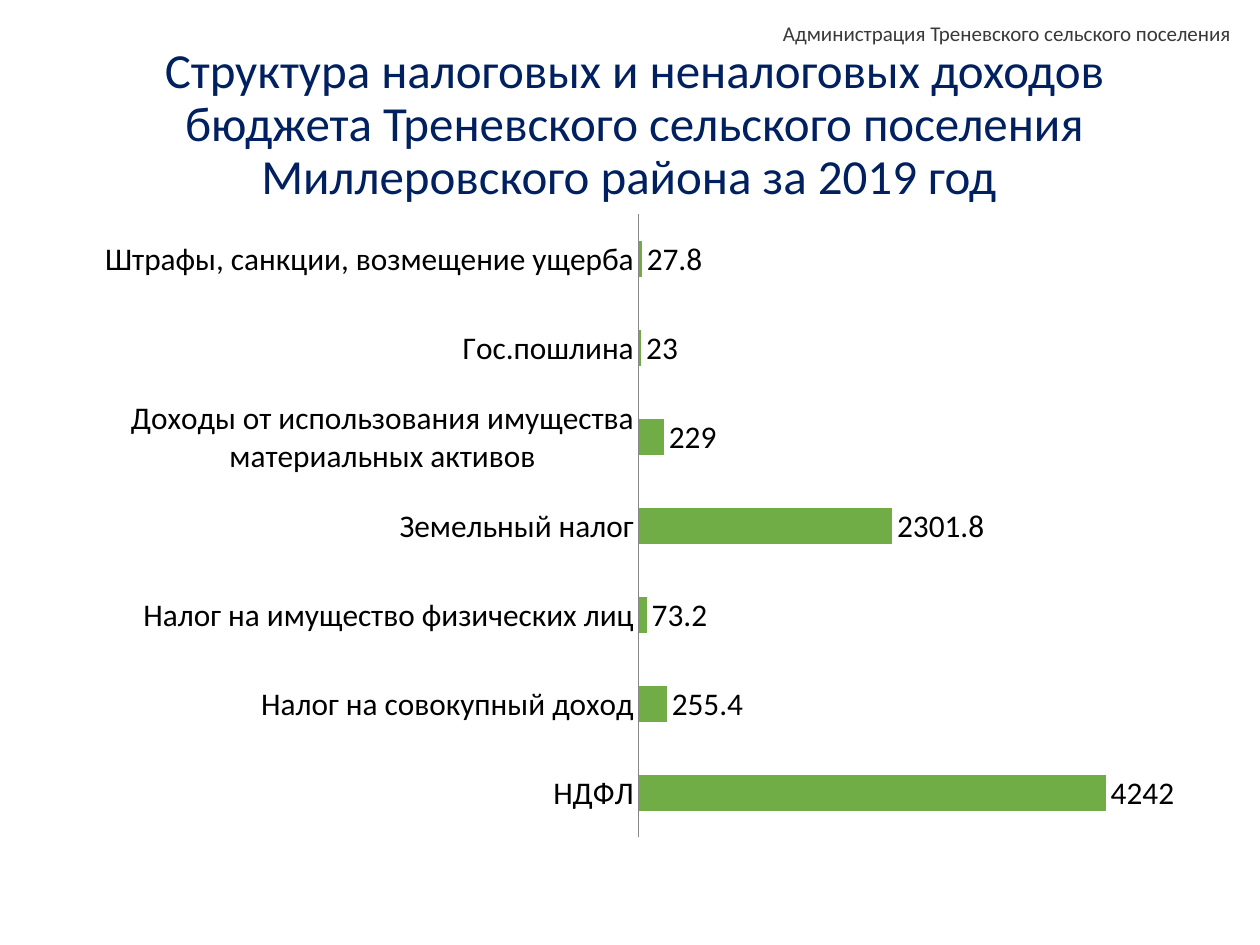
from lxml import etree
from pptx import Presentation
from pptx.chart.data import CategoryChartData
from pptx.dml.color import RGBColor
from pptx.enum.chart import XL_CHART_TYPE, XL_LABEL_POSITION, XL_TICK_MARK
from pptx.enum.text import MSO_ANCHOR, MSO_AUTO_SIZE, PP_ALIGN
from pptx.oxml.ns import qn
from pptx.util import Inches, Pt

BAR_CLUSTERED = XL_CHART_TYPE.BAR_CLUSTERED
OUTSIDE_END = XL_LABEL_POSITION.OUTSIDE_END
NO_TICK = XL_TICK_MARK.NONE
MIDDLE = MSO_ANCHOR.MIDDLE
NO_AUTO_SIZE = MSO_AUTO_SIZE.NONE
CENTER, RIGHT = PP_ALIGN.CENTER, PP_ALIGN.RIGHT

FONT = "Calibri"
COLORS = {"title": "002060", "header": "3B3838", "text": "000000",
          "bar": "70AD47", "axis": "878787"}
TITLE = ("Структура налоговых и неналоговых доходов бюджета Треневского "
         "сельского поселения Миллеровского района за 2019 год ")
HEADER = "Администрация Треневского сельского поселения"
REVENUES = {
    "НДФЛ": 4242,
    "Налог на совокупный доход": 255.4,
    "Налог на имущество физических лиц": 73.2,
    "Земельный налог": 2301.8,
    "Доходы от использования имущества материальных активов": 229,
    "Гос.пошлина": 23,
    "Штрафы, санкции, возмещение ущерба": 27.8,
}
PLOT_LAYOUT = {"layoutTarget": "inner", "xMode": "edge", "yMode": "edge",
               "x": 0.51, "y": 0.02, "w": 0.46, "h": 0.96}


def color(name):
    return RGBColor.from_string(COLORS[name])


def set_attributes(target, values):
    for name, value in values.items():
        setattr(target, name, value)


def format_font(font, size, color_name):
    set_attributes(font, {"name": FONT, "size": Pt(size), "bold": False})
    font.color.rgb = color(color_name)


def fill_text(shape, text, size, color_name, alignment, line_spacing=1.0):
    frame = shape.text_frame
    set_attributes(frame, {"word_wrap": True, "auto_size": NO_AUTO_SIZE,
                           "vertical_anchor": MIDDLE})
    paragraph = frame.paragraphs[0]
    set_attributes(paragraph, {"alignment": alignment, "line_spacing": line_spacing})
    run = paragraph.add_run()
    run.text = text
    format_font(run.font, size, color_name)


def add_title(slide):
    title = slide.shapes.title
    set_attributes(title, {"left": Inches(0.75), "top": Inches(0.46),
                           "width": Inches(8.57), "height": Inches(1.07)})
    fill_text(title, TITLE, 28, "title", CENTER, 0.9)


def add_header(slide):
    box = slide.shapes.add_textbox(Inches(3.54), Inches(0.14), Inches(6.33), Inches(0.24))
    fill_text(box, HEADER, 12, "header", RIGHT)


def set_plot_layout(chart):
    """Fix the inner plot area so that the category labels keep their room."""
    plot_area = chart.plots[0]._element.getparent()
    layout = plot_area.find(qn("c:layout"))
    if layout is None:
        layout = etree.Element(qn("c:layout"))
        plot_area.insert(0, layout)
    manual = etree.SubElement(layout, qn("c:manualLayout"))
    for name, value in PLOT_LAYOUT.items():
        etree.SubElement(manual, qn(f"c:{name}")).set("val", str(value))


def add_revenue_chart(slide):
    data = CategoryChartData()
    data.categories = REVENUES.keys()
    data.add_series("Series 1", REVENUES.values())
    chart = slide.shapes.add_chart(BAR_CLUSTERED, Inches(0.71), Inches(1.6),
                                   Inches(8.61), Inches(5.15), data).chart
    set_attributes(chart, {"has_legend": False, "has_title": False})
    format_font(chart.font, 18, "text")

    set_attributes(chart.value_axis, {"visible": False, "has_major_gridlines": False,
                                      "minimum_scale": 0, "maximum_scale": 4500})
    axis = chart.category_axis
    set_attributes(axis, {"major_tick_mark": NO_TICK, "minor_tick_mark": NO_TICK,
                          "has_major_gridlines": False})
    axis.format.line.color.rgb = color("axis")
    axis.format.line.width = Pt(0.75)

    plot = chart.plots[0]
    set_attributes(plot, {"gap_width": 150, "overlap": -25, "vary_by_categories": False,
                          "has_data_labels": True})
    set_attributes(plot.data_labels, {"show_value": True, "position": OUTSIDE_END,
                                      "number_format": "General",
                                      "number_format_is_linked": False})
    format_font(plot.data_labels.font, 18, "text")
    bars = plot.series[0].format.fill
    bars.solid()
    bars.fore_color.rgb = color("bar")
    set_plot_layout(chart)


def main():
    presentation = Presentation()
    set_attributes(presentation, {"slide_width": Inches(10), "slide_height": Inches(7.5)})
    slide = presentation.slides.add_slide(presentation.slide_layouts[5])
    add_title(slide)
    add_header(slide)
    add_revenue_chart(slide)
    presentation.save("out.pptx")


if __name__ == "__main__":
    main()
